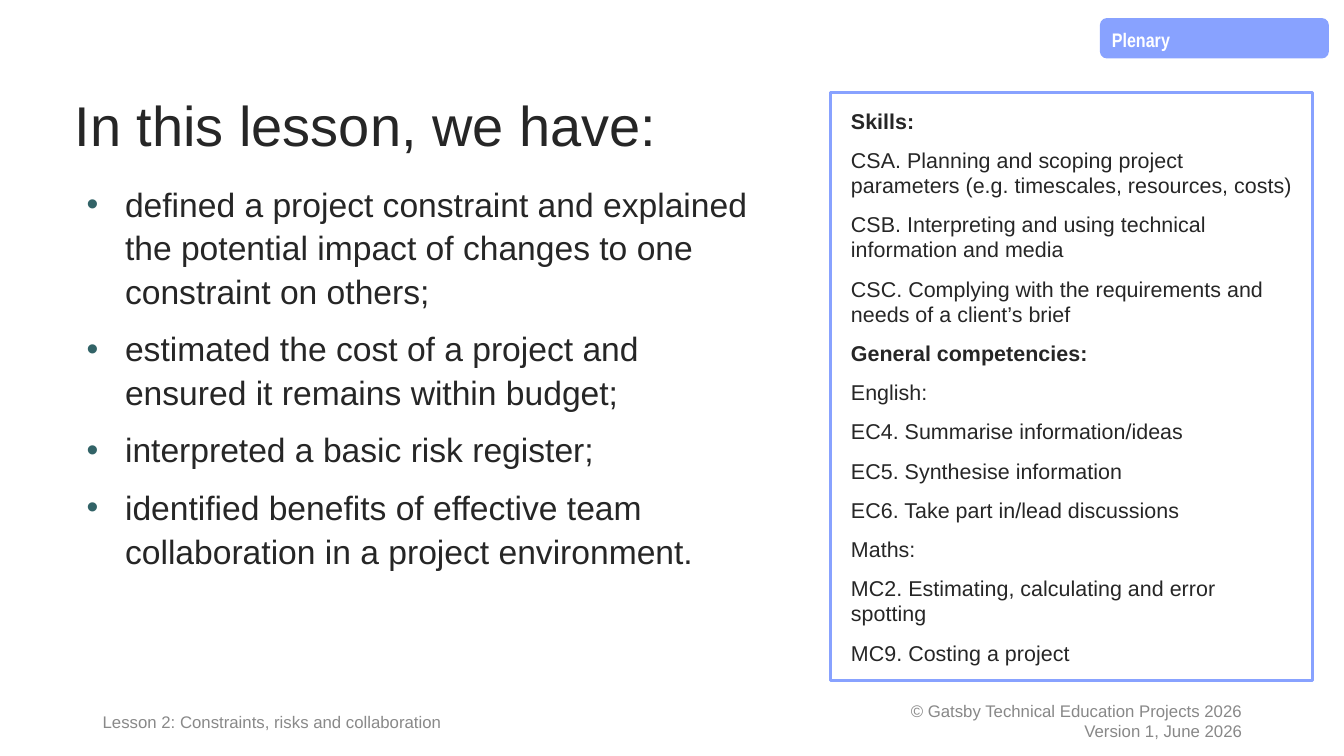
from lxml import etree
from pptx import Presentation
from pptx import util as u
from pptx.dml.color import RGBColor
from pptx.enum import shapes, text
from pptx.oxml import ns

PX = 9144
INK = RGBColor(0x26, 0x26, 0x26)
GREY = RGBColor(0x88, 0x88, 0x88)
FOOTER_GREY = RGBColor(0x89, 0x89, 0x89)
LILAC = RGBColor(0x88, 0xA2, 0xFF)
TEAL = RGBColor(0x32, 0x63, 0x67)
WHITE = RGBColor(0xFF, 0xFF, 0xFF)

OUTCOMES = [
    "defined a project constraint and explained the potential impact of changes to one constraint on others;",
    "estimated the cost of a project and ensured it remains within budget;",
    "interpreted a basic risk register;",
    "identified benefits of effective team collaboration in a project environment.",
]
HEADINGS = ("Skills:", "General competencies:")
SKILLS = [
    HEADINGS[0],
    "CSA. Planning and scoping project parameters (e.g. timescales, resources, costs)",
    "CSB. Interpreting and using technical information and media",
    "CSC. Complying with the requirements and needs of a client’s brief",
    HEADINGS[1],
    "English:",
    "EC4. Summarise information/ideas",
    "EC5. Synthesise information",
    "EC6. Take part in/lead discussions",
    "Maths:",
    "MC2. Estimating, calculating and error spotting",
    "MC9. Costing a project",
]
COPYRIGHT = ["© Gatsby Technical Education Projects 2026", "Version 1, June 2026"]


def px(*lengths):
    return [u.Emu(length * PX) for length in lengths]


def place(shape, left, top, width, height):
    shape.left, shape.top, shape.width, shape.height = px(left, top, width, height)


def write(shape, lines, size, color, font="Arial", bold=False, spacing=1.0, gap=0,
          align=text.PP_ALIGN.LEFT, anchor=text.MSO_ANCHOR.MIDDLE, inset=(10, 5)):
    frame = shape.text_frame
    frame.text = "\n".join(lines)
    frame.word_wrap = True
    frame.auto_size = text.MSO_AUTO_SIZE.NONE
    frame.vertical_anchor = anchor
    frame.margin_left, frame.margin_top = px(*inset)
    frame.margin_right, frame.margin_bottom = px(*inset)
    for index, paragraph in enumerate(frame.paragraphs):
        paragraph.alignment = align
        paragraph.line_spacing = spacing
        paragraph.space_before = u.Pt(gap if index else 0)
        for run in paragraph.runs:
            run.font.name = font
            run.font.size = u.Pt(size)
            run.font.bold = bold
            run.font.color.rgb = color


def set_bullets(shape, left, hanging, character=None):
    for paragraph in shape.text_frame.paragraphs:
        properties = paragraph._p.get_or_add_pPr()
        properties.set("marL", str(left * PX))
        properties.set("indent", str(-hanging * PX))
        if character:
            bullet_color = etree.SubElement(properties, ns.qn("a:buClr"))
            etree.SubElement(bullet_color, ns.qn("a:srgbClr"), val=str(TEAL))
            etree.SubElement(properties, ns.qn("a:buFont"), typeface="Arial")
            etree.SubElement(properties, ns.qn("a:buChar"), char=character)
        else:
            etree.SubElement(properties, ns.qn("a:buNone"))


def add_title(slide):
    title = slide.shapes.title
    place(title, 64, 55, 1150, 145)
    write(title, ["In this lesson, we have:"], 40, INK, spacing=0.9)


def add_outcomes(slide):
    outcomes = slide.placeholders[1]
    place(outcomes, 64, 174, 700, 476)
    write(outcomes, OUTCOMES, 24, INK, spacing=1.08, gap=10, anchor=text.MSO_ANCHOR.TOP)
    set_bullets(outcomes, 50, 38, "•")


def add_skills(slide):
    skills = slide.placeholders[2]
    place(skills, 824, 92, 478, 583)
    skills.fill.solid()
    skills.fill.fore_color.rgb = WHITE
    skills.line.color.rgb = LILAC
    skills.line.width = u.Pt(2.25)
    write(skills, SKILLS, 15.3, INK, spacing=0.98, gap=10,
          anchor=text.MSO_ANCHOR.TOP, inset=(20, 16))
    set_bullets(skills, 0, 0)
    for paragraph in skills.text_frame.paragraphs:
        for run in paragraph.runs:
            run.font.bold = run.text in HEADINGS


def add_footer(slide, left, width, lines, color, **style):
    footer = slide.shapes.add_textbox(*px(left, 695, width, 40))
    write(footer, lines, 12, color, **style)


def add_stage_tag(slide, label):
    tag = slide.shapes.add_shape(shapes.MSO_SHAPE.FLOWCHART_ALTERNATE_PROCESS,
                                 *px(1091, 18, 227, 40))
    tag.shadow.inherit = False
    tag.fill.solid()
    tag.fill.fore_color.rgb = LILAC
    tag.line.fill.background()
    write(tag, [label], 14, WHITE, font="Arial Narrow", bold=True, spacing=1.08)


def main():
    presentation = Presentation()
    presentation.slide_width, presentation.slide_height = px(1333, 750)
    slide = presentation.slides.add_slide(presentation.slide_layouts.get_by_name("Two Content"))
    add_title(slide)
    add_outcomes(slide)
    add_skills(slide)
    add_footer(slide, 792, 450, COPYRIGHT, GREY, align=text.PP_ALIGN.RIGHT)
    add_footer(slide, 92, 460, ["Lesson 2: Constraints, risks and collaboration"],
               FOOTER_GREY, spacing=1.08)
    add_stage_tag(slide, "Plenary")
    presentation.save("out.pptx")


if __name__ == "__main__":
    main()
